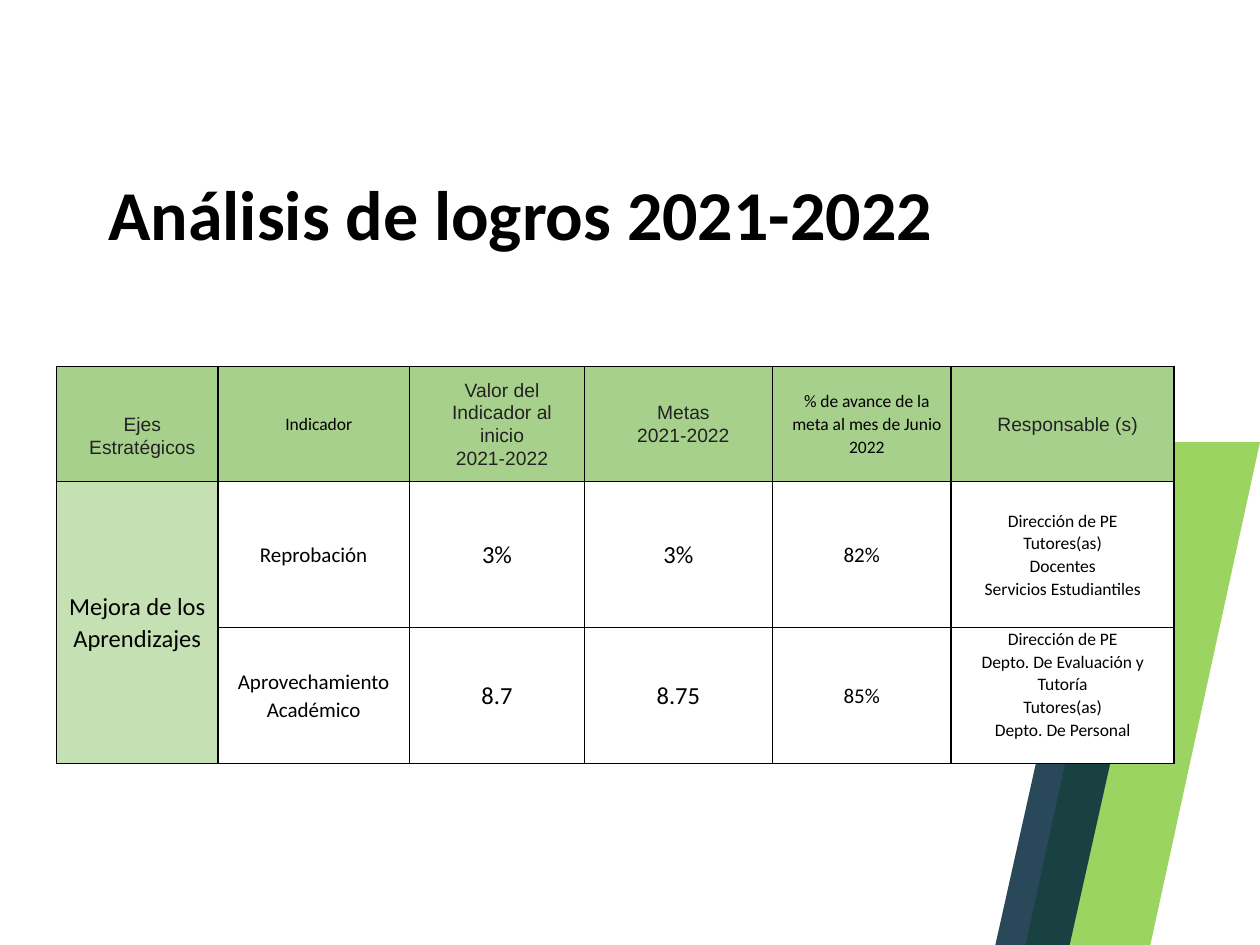
"""Build the slide with the 2021-2022 achievements table."""
from pptx import Presentation
from pptx.dml.color import RGBColor
from pptx.enum.text import MSO_ANCHOR as ANCHOR, PP_ALIGN as ALIGN
from pptx.oxml import parse_xml
from pptx.oxml.ns import nsdecls
from pptx.util import Inches, Pt

BLACK = RGBColor(0x00, 0x00, 0x00)
GRAY = RGBColor(0x22, 0x22, 0x22)
WHITE = RGBColor(0xFF, 0xFF, 0xFF)
HEADER = RGBColor(0xA8, 0xD0, 0x8D)
AXIS = RGBColor(0xC5, 0xE0, 0xB3)
LIME = RGBColor(0x92, 0xD0, 0x50)
NAVY = RGBColor(0x00, 0x26, 0x3B)


def write(tf, text, size=12, font="Calibri", color=BLACK, bold=False,
          align=ALIGN.CENTER, spacing=1.07, indent=0):
    tf.word_wrap = True
    for i, line in enumerate(text.split("\n")):
        p = tf.paragraphs[0] if i == 0 else tf.add_paragraph()
        p.alignment, p.line_spacing = align, spacing
        if indent:
            p._p.get_or_add_pPr().set("marL", str(Inches(indent)))
        r = p.add_run()
        r.text = line
        r.font.size, r.font.name, r.font.bold = Pt(size), font, bold
        r.font.color.rgb = color


def add_borders(cell):
    tcPr = cell._tc.get_or_add_tcPr()
    for side in ("lnL", "lnR", "lnT", "lnB"):
        tcPr.append(parse_xml(
            f'<a:{side} {nsdecls("a")} w="{Pt(1)}"><a:solidFill>'
            f'<a:srgbClr val="{BLACK}"/></a:solidFill></a:{side}>'))


prs = Presentation()
prs.slide_width, prs.slide_height = Inches(10), Inches(7.5)
s = prs.slides.add_slide(prs.slide_layouts[5])

title = s.shapes.title
title.left, title.top = Inches(0.76), Inches(1.33)
title.width, title.height = Inches(8.62), Inches(0.8)
title.fill.solid()
title.fill.fore_color.rgb = WHITE
title.text_frame.vertical_anchor = ANCHOR.MIDDLE
write(title.text_frame, "Análisis de logros 2021-2022", size=40, bold=True,
      align=ALIGN.LEFT, spacing=0.9)

bands = [
    ([(10, 3.51), (9.01, 3.51), (8.14, 7.5), (9.13, 7.5)], LIME, 90),
    ([(8.97, 5.35), (8.38, 5.35), (7.9, 7.5), (8.49, 7.5)], NAVY, 84),
]
group = s.shapes.add_group_shape()
for points, color, opacity in bands:
    corners = [(Inches(x), Inches(y)) for x, y in points]
    builder = group.shapes.build_freeform(*corners[0])
    builder.add_line_segments(corners[1:], close=True)
    sp = builder.convert_to_shape()
    sp.shadow.inherit = False
    sp.line.fill.background()
    sp.fill.solid()
    sp.fill.fore_color.rgb = color
    clr = sp.fill._xPr.solidFill[0]
    clr.append(parse_xml(f'<a:alpha {nsdecls("a")} val="{opacity * 1000}"/>'))

widths = [1.28, 1.52, 1.39, 1.49, 1.42, 1.77]
heights = [0.91, 1.16, 1.08]
rows = [
    ["Ejes Estratégicos", "Indicador", "Valor del Indicador al inicio\n2021-2022",
     "Metas\n2021-2022", "% de avance de la meta al mes de Junio 2022",
     "Responsable (s)"],
    ["Mejora de los Aprendizajes", "Reprobación", "3%", "3%", "82%",
     "Dirección de PE\nTutores(as)\nDocentes\nServicios Estudiantiles"],
    ["", "Aprovechamiento Académico", "8.7", "8.75", "85%",
     "Dirección de PE\nDepto. De Evaluación y Tutoría\nTutores(as)\n"
     "Depto. De Personal"],
]
body_sizes = [14, 12, 14, 14, 12, 10]

table = s.shapes.add_table(len(rows), len(widths), Inches(0.45), Inches(2.91),
                           Inches(sum(widths)), Inches(sum(heights))).table
for column, width in zip(table.columns, widths):
    column.width = Inches(width)
for row, height in zip(table.rows, heights):
    row.height = Inches(height)
table.cell(1, 0).merge(table.cell(2, 0))

for i, texts in enumerate(rows):
    for j, text in enumerate(texts):
        cell = table.cell(i, j)
        add_borders(cell)
        cell.fill.solid()
        cell.fill.fore_color.rgb = HEADER if i == 0 else AXIS if j == 0 else WHITE
        cell.vertical_anchor = ANCHOR.MIDDLE
        cell.margin_left = cell.margin_right = Inches(0.07)
        cell.margin_top = cell.margin_bottom = 0
        if not text:
            continue
        if i > 0:
            write(cell.text_frame, text, size=body_sizes[j])
        elif j in (1, 4):
            write(cell.text_frame, text, size=10, indent=0.08)
        else:
            write(cell.text_frame, text, size=11, font="Arial", color=GRAY,
                  indent=0.08)

table.cell(0, 0).margin_top = Inches(0.18)
table.cell(2, 5).margin_bottom = Inches(0.18)

prs.save("out.pptx")
